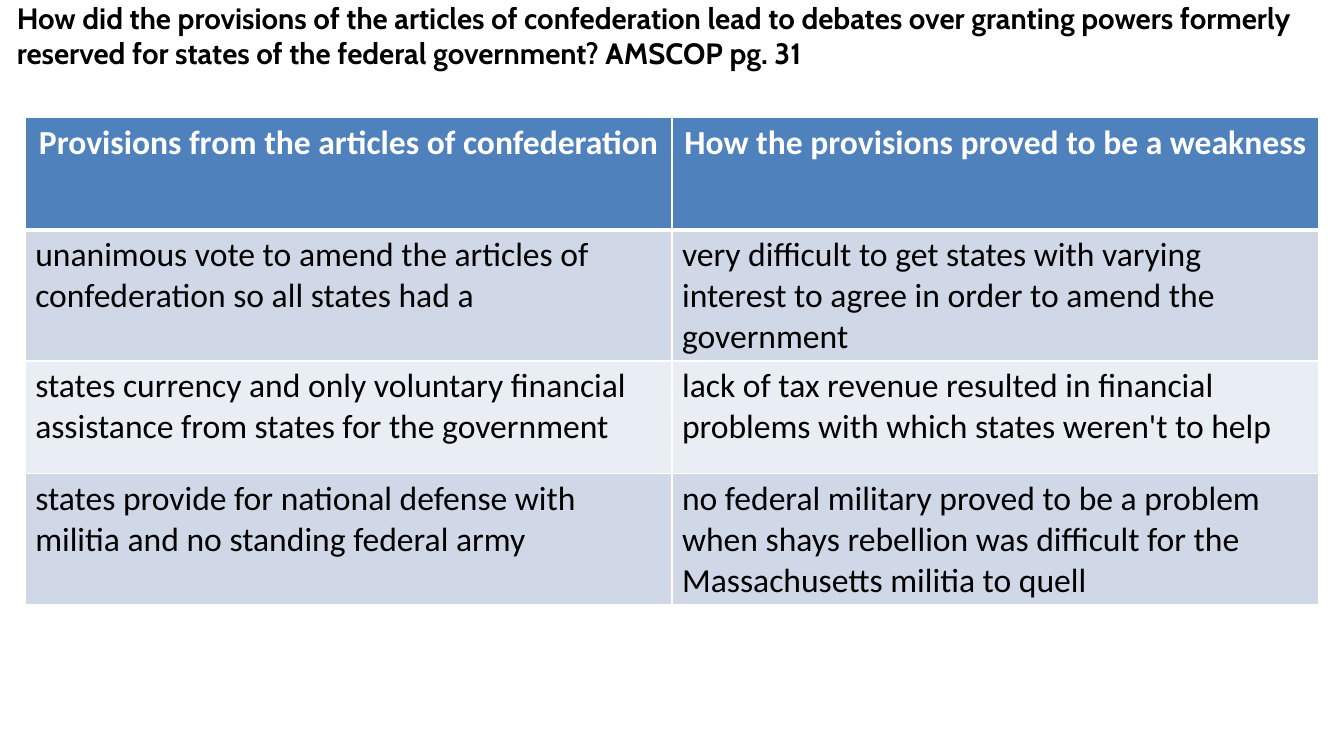
from dataclasses import dataclass

from lxml import etree
from pptx import Presentation
from pptx.dml.color import RGBColor
from pptx.enum.text import MSO_ANCHOR, MSO_AUTO_SIZE, PP_ALIGN
from pptx.oxml.ns import qn
from pptx.util import Pt

PX = 9525  # EMU per px, 96 px to the inch
TOP = MSO_ANCHOR.TOP
FIT_SHAPE = MSO_AUTO_SIZE.SHAPE_TO_FIT_TEXT
LEFT, CENTER = PP_ALIGN.LEFT, PP_ALIGN.CENTER
TITLE_ONLY = 5


@dataclass(frozen=True)
class Theme:
    title_font: str = "Cabin"
    table_font: str = "Calibri"
    title_size: int = 21
    table_size: int = 24
    ink: str = "000000"
    white: str = "FFFFFF"
    header: str = "4F81BD"
    bands: tuple = ("D0D8E8", "E9EDF4")
    thin_line: int = 1
    header_line: int = 3


THEME = Theme()

QUESTION = (
    "How did the provisions of the articles of confederation lead to debates over "
    "granting powers formerly reserved for states of the federal government? AMSCOP pg. 31"
)
PROVISIONS = [
    ("Provisions from the articles of confederation",
     "How the provisions proved to be a weakness"),
    ("unanimous vote to amend the articles of confederation so all states had a",
     "very difficult to get states with varying interest to agree in order to amend the government"),
    ("states currency and only voluntary financial assistance from states for the government",
     "lack of tax revenue resulted in financial problems with which states weren't to help"),
    ("states provide for national defense with militia and no standing federal army",
     "no federal military proved to be a problem when shays rebellion was difficult "
     "for the Massachusetts militia to quell"),
]


def format_paragraph(paragraph, font_name, size, color, bold, alignment):
    paragraph.alignment = alignment
    font = paragraph.font
    font.name, font.size, font.bold = font_name, Pt(size), bold
    font.color.rgb = RGBColor.from_string(color)


def set_borders(cell, top, bottom):
    """Draw white cell borders; the side lines are always thin."""
    properties = cell._tc.get_or_add_tcPr()
    widths = {"lnL": THEME.thin_line, "lnR": THEME.thin_line, "lnT": top, "lnB": bottom}
    for position, (tag, width) in enumerate(widths.items()):
        line = etree.Element(qn(f"a:{tag}"), w=str(Pt(width)))
        fill = etree.SubElement(line, qn("a:solidFill"))
        etree.SubElement(fill, qn("a:srgbClr"), val=THEME.white)
        properties.insert(position, line)


def add_question(slide, left, top, width, height):
    title = slide.shapes.title
    title.left, title.top = left * PX, top * PX
    title.width, title.height = width * PX, height * PX
    frame = title.text_frame
    frame.margin_left = frame.margin_right = frame.margin_top = frame.margin_bottom = 0
    frame.vertical_anchor, frame.word_wrap, frame.auto_size = TOP, True, FIT_SHAPE
    frame.text = QUESTION
    format_paragraph(frame.paragraphs[0], THEME.title_font, THEME.title_size,
                     THEME.ink, True, LEFT)


def add_provisions_table(slide, left, top, width, height):
    row_count, column_count = len(PROVISIONS), len(PROVISIONS[0])
    table = slide.shapes.add_table(row_count, column_count, left * PX, top * PX,
                                   width * PX, height * PX).table
    for row_index, texts in enumerate(PROVISIONS):
        is_header = row_index == 0
        background = THEME.header if is_header else THEME.bands[(row_index - 1) % 2]
        color = THEME.white if is_header else THEME.ink
        # The header and the first body row share the thick line
        top_line = THEME.header_line if row_index == 1 else THEME.thin_line
        bottom_line = THEME.header_line if is_header else THEME.thin_line
        for column_index, text in enumerate(texts):
            cell = table.cell(row_index, column_index)
            cell.text = text
            cell.fill.solid()
            cell.fill.fore_color.rgb = RGBColor.from_string(background)
            set_borders(cell, top_line, bottom_line)
            format_paragraph(cell.text_frame.paragraphs[0], THEME.table_font, THEME.table_size,
                             color, is_header, CENTER if is_header else LEFT)


def main():
    presentation = Presentation()
    presentation.slide_width, presentation.slide_height = 1280 * PX, 720 * PX
    slide = presentation.slides.add_slide(presentation.slide_layouts[TITLE_ONLY])
    # Question across the top, table below
    add_question(slide, 16, 0, 1248, 68)
    add_provisions_table(slide, 24, 112, 1232, 428)
    presentation.save("out.pptx")


if __name__ == "__main__":
    main()
